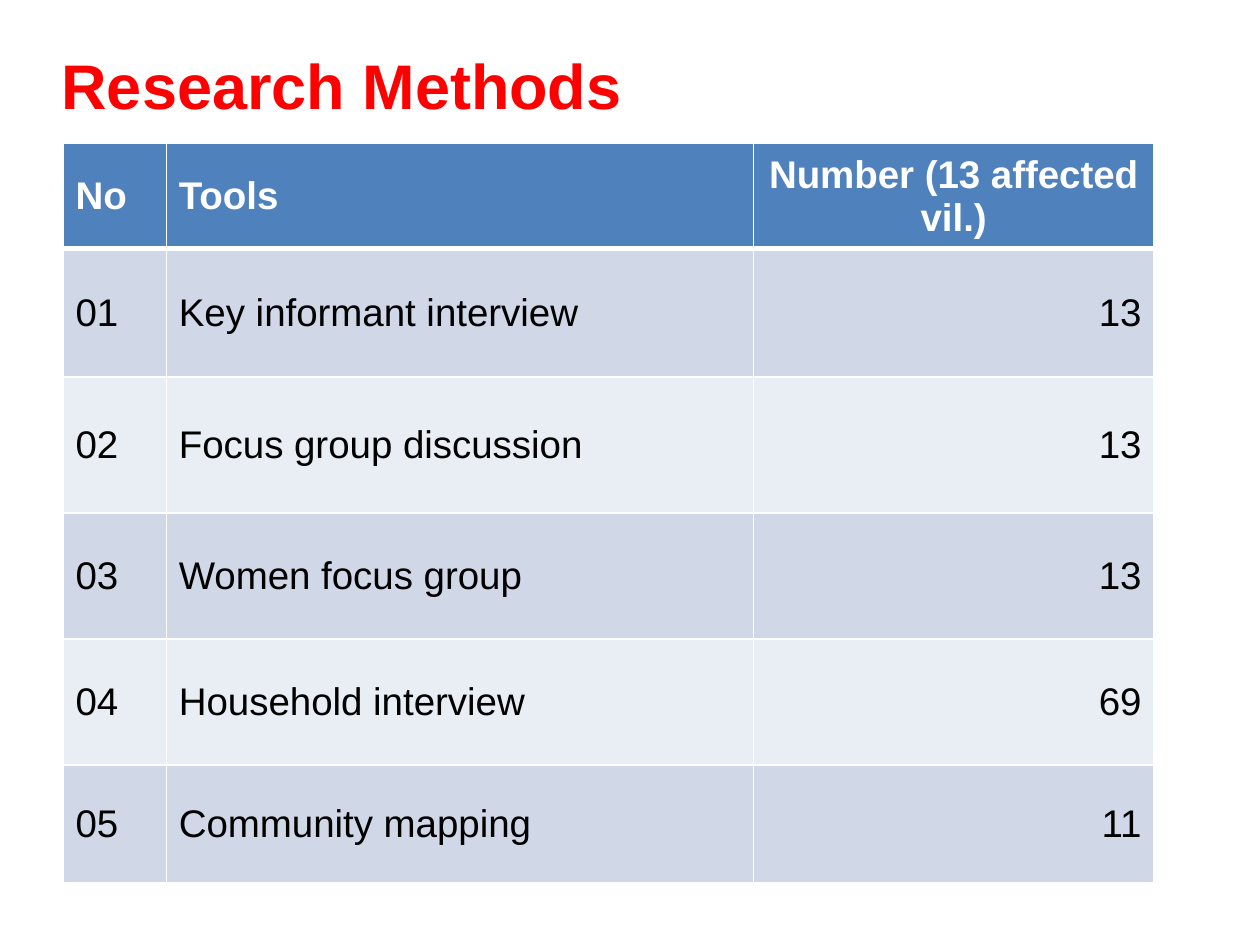
from dataclasses import dataclass

from lxml.etree import SubElement
from pptx import Presentation
from pptx.dml.color import RGBColor as RGB
from pptx.enum.text import MSO_ANCHOR as Anchor, PP_ALIGN as Align
from pptx.oxml.ns import qn
from pptx.util import Inches, Pt


@dataclass(frozen=True)
class Theme:
    font: str = "Arial"
    title: str = "FF0000"
    header: str = "4F81BD"
    bands: tuple = ("D0D8E8", "E9EDF4")
    light: str = "FFFFFF"
    dark: str = "000000"
    title_size: int = 36
    table_size: int = 22
    rule: int = 1
    header_rule: int = 3


THEME = Theme()

COL_WIDTHS = (0.82, 4.66, 3.18)
ROW_HEIGHTS = (0.66, 1.02, 1.08, 1, 1, 0.93)
HEADINGS = ("No", "Tools", "Number (13 affected vil.)")
TOOLS = (
    ("Key informant interview", 13),
    ("Focus group discussion", 13),
    ("Women focus group", 13),
    ("Household interview", 69),
    ("Community mapping", 11),
)


def write(tf, text, *, size, color, bold=False, align=Align.LEFT):
    p = tf.paragraphs[0]
    p.alignment = align
    r = p.add_run()
    r.text = text
    r.font.name = THEME.font
    r.font.size = Pt(size)
    r.font.bold = bold
    r.font.color.rgb = RGB.from_string(color)


def set_borders(cell, **widths):
    """Draw the cell's edges; widths are points keyed L, R, T, B in that order."""
    tc_pr = cell._tc.get_or_add_tcPr()
    for side, width in widths.items():
        ln = SubElement(tc_pr, qn(f"a:ln{side}"), w=str(Pt(width)))
        fill = SubElement(ln, qn("a:solidFill"))
        SubElement(fill, qn("a:srgbClr"), val=THEME.light)


def add_title(s, text, left, top, width, height):
    box = s.shapes.add_textbox(left, top, width, height)
    tf = box.text_frame
    tf.word_wrap = True
    tf.vertical_anchor = Anchor.MIDDLE
    write(tf, text, size=THEME.title_size, color=THEME.title, bold=True)


def add_methods_table(s, left, top, width, height):
    rows = [HEADINGS] + [
        (f"{i:02}", tool, str(count)) for i, (tool, count) in enumerate(TOOLS, 1)
    ]
    table = s.shapes.add_table(
        len(rows), len(HEADINGS), left, top, width, height
    ).table
    for col, share in zip(table.columns, COL_WIDTHS):
        col.width = int(width * share / sum(COL_WIDTHS))
    for row, share in zip(table.rows, ROW_HEIGHTS):
        row.height = int(height * share / sum(ROW_HEIGHTS))

    for i, values in enumerate(rows):
        is_header = i == 0
        fill = THEME.header if is_header else THEME.bands[(i - 1) % 2]
        number_align = Align.CENTER if is_header else Align.RIGHT
        for j, (text, align) in enumerate(
            zip(values, (Align.LEFT, Align.LEFT, number_align))
        ):
            cell = table.cell(i, j)
            cell.vertical_anchor = Anchor.MIDDLE
            set_borders(
                cell,
                L=THEME.rule,
                R=THEME.rule,
                T=THEME.header_rule if i == 1 else THEME.rule,
                B=THEME.header_rule if is_header else THEME.rule,
            )
            cell.fill.solid()
            cell.fill.fore_color.rgb = RGB.from_string(fill)
            write(
                cell.text_frame,
                text,
                size=THEME.table_size,
                color=THEME.light if is_header else THEME.dark,
                bold=is_header,
                align=align,
            )


def main():
    prs = Presentation()
    prs.slide_width, prs.slide_height = Inches(10), Inches(7.5)
    s = prs.slides.add_slide(prs.slide_layouts[6])
    add_title(
        s, "Research Methods", Inches(0.39), Inches(0.32), Inches(8.97), Inches(0.69)
    )
    add_methods_table(
        s, Inches(0.5), Inches(1.14), Inches(sum(COL_WIDTHS)), Inches(sum(ROW_HEIGHTS))
    )
    prs.save("out.pptx")


if __name__ == "__main__":
    main()
